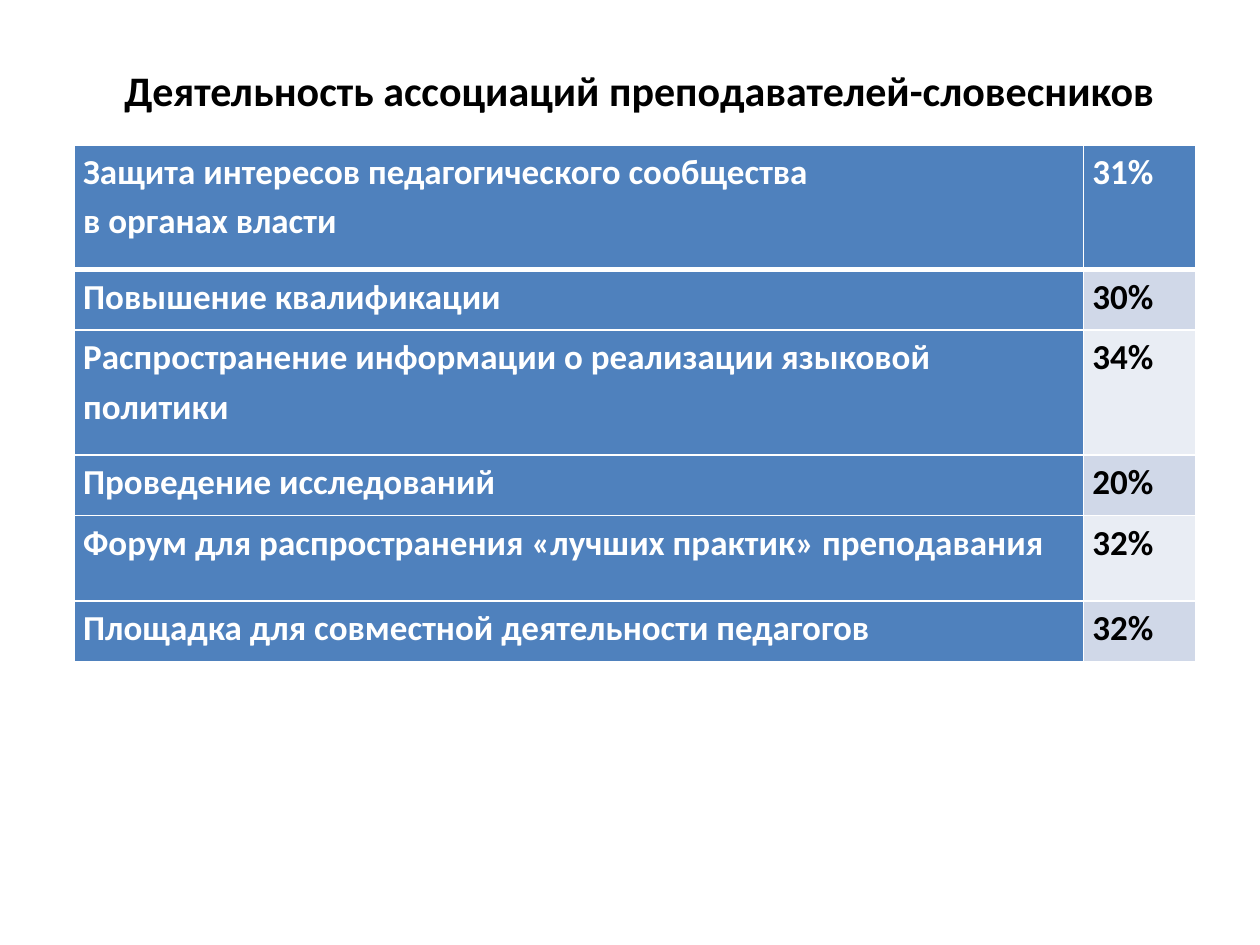
from lxml import etree
from pptx import Presentation
from pptx.dml.color import RGBColor
from pptx.enum.text import MSO_ANCHOR, PP_ALIGN
from pptx.oxml.ns import qn
from pptx.util import Inches, Pt

MID, TOP = MSO_ANCHOR.MIDDLE, MSO_ANCHOR.TOP
CENTER, LEFT = PP_ALIGN.CENTER, PP_ALIGN.LEFT

# Content
TITLE = "Деятельность ассоциаций преподавателей-словесников"
ROWS = [
    ("Защита интересов педагогического сообщества\nв органах власти", "31%", 0.99),
    ("Повышение квалификации", "30%", 0.48),
    ("Распространение информации о реализации языковой политики", "34%", 0.99),
    ("Проведение исследований", "20%", 0.48),
    ("Форум для распространения «лучших практик» преподавания", "32%", 0.68),
    ("Площадка для совместной деятельности педагогов", "32%", 0.48),
]
COLS = (8.01, 0.89)
BLUE, WHITE, BLACK = "4F81BD", "FFFFFF", "000000"
BANDS = ("E9EDF4", "D0D8E8")


def color(code):
    return RGBColor.from_string(code)


def style(frame, size, ink, align, space=None):
    look = {"name": "Calibri", "size": Pt(size), "bold": True}
    for para in frame.paragraphs:
        para.alignment = align
        if space:
            para.line_spacing = space
        for run in para.runs:
            for key, value in look.items():
                setattr(run.font, key, value)
            run.font.color.rgb = color(ink)


def border(cell, widths):
    props = cell._tc.get_or_add_tcPr()
    for spot, (side, width) in enumerate(widths.items()):
        line = etree.Element(qn("a:ln" + side), w=str(Pt(width)))
        fill = etree.SubElement(line, qn("a:solidFill"))
        etree.SubElement(fill, qn("a:srgbClr"), val=WHITE)
        props.insert(spot, line)


deck = Presentation()
deck.slide_width, deck.slide_height = Inches(10), Inches(7.5)
slide = deck.slides.add_slide(deck.slide_layouts[5])

# Title
title = slide.shapes.title
place = {"left": 0.51, "top": 0.36, "width": 9.13, "height": 0.71}
for key, value in place.items():
    setattr(title, key, Inches(value))
title.text_frame.text = TITLE
title.text_frame.vertical_anchor = MID
style(title.text_frame, 24, BLACK, CENTER)

# Table
tall = sum(row[2] for row in ROWS)
table = slide.shapes.add_table(
    len(ROWS), len(COLS), Inches(0.59), Inches(1.15),
    Inches(sum(COLS)), Inches(tall)).table
for col, width in zip(table.columns, COLS):
    col.width = Inches(width)

pads = {"margin_left": 0.07, "margin_right": 0.07,
        "margin_top": 0, "margin_bottom": 0}
for r, (label, share, height) in enumerate(ROWS):
    table.rows[r].height = Inches(height)
    for c, text in enumerate((label, share)):
        cell = table.cell(r, c)
        dark = r == 0 or c == 0
        cell.text = text
        cell.vertical_anchor = TOP
        for key, value in pads.items():
            setattr(cell, key, Inches(value))
        cell.fill.solid()
        cell.fill.fore_color.rgb = color(BLUE if dark else BANDS[r % 2])
        style(cell.text_frame, 20, WHITE if dark else BLACK, LEFT, 1.15)
        # The header's lower rule is thicker than the rest
        border(cell, {"L": 1, "R": 1, "T": 3 if r == 1 else 1,
                      "B": 3 if r == 0 else 1})

deck.save("out.pptx")
